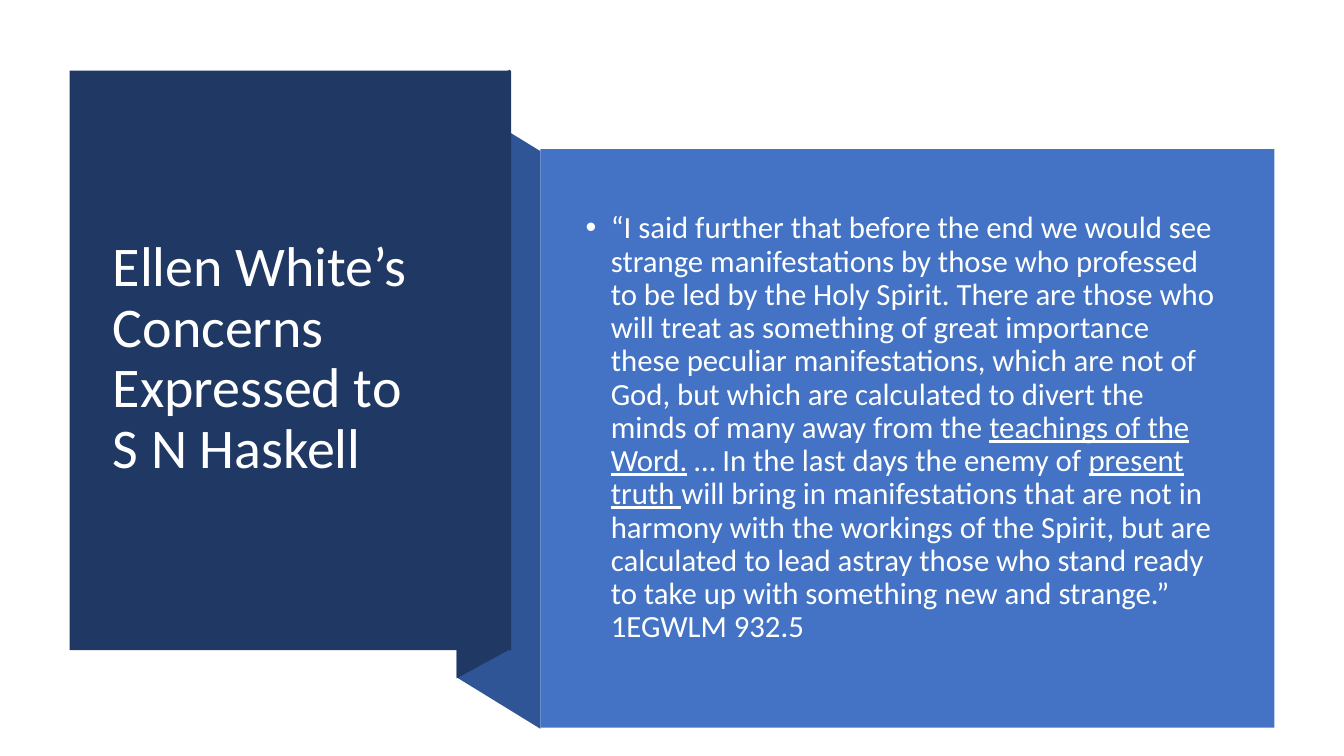
import pptx
import pptx.dml.color
import pptx.enum.shapes
import pptx.enum.text
import pptx.util
from lxml import etree

Inches = pptx.util.Inches
NAVY, SHADE, BLUE, WHITE = "203864", "2F5597", "4472C4", "FFFFFF"


def color(value):
    return pptx.dml.color.RGBColor.from_string(value)


class SlideBuilder:
    """Holds the text style and the current slide."""

    font = "Calibri"
    line_spacing = 0.9

    def __init__(self, page):
        self.page = page

    def paint(self, shape, fill):
        shape.shadow.inherit = False
        shape.fill.solid()
        shape.fill.fore_color.rgb = color(fill)
        shape.line.fill.background()

    def panel(self, left, top, width, height, fill):
        shape = self.page.shapes.add_shape(
            pptx.enum.shapes.MSO_SHAPE.RECTANGLE,
            Inches(left), Inches(top), Inches(width), Inches(height))
        self.paint(shape, fill)

    def fold(self, points, fill):
        corners = [(Inches(x), Inches(y)) for x, y in points]
        outline = self.page.shapes.build_freeform(*corners[0])
        outline.add_line_segments(corners[1:], close=True)
        self.paint(outline.convert_to_shape(), fill)

    def text(self, left, top, width, height, spans, size, fill):
        """Adds one paragraph made of (words, underlined) spans."""
        box = self.page.shapes.add_textbox(
            Inches(left), Inches(top), Inches(width), Inches(height))
        frame = box.text_frame
        frame.word_wrap = True
        frame.vertical_anchor = pptx.enum.text.MSO_ANCHOR.MIDDLE
        para = frame.paragraphs[0]
        para.line_spacing = self.line_spacing
        for words, underlined in spans:
            for number, line in enumerate(words.split("\n")):
                if number:
                    para.add_line_break()
                span = para.add_run()
                span.text = line
                span.font.name = self.font
                span.font.size = pptx.util.Pt(size)
                span.font.color.rgb = color(fill)
                span.font.underline = underlined
        return para

    def bullet(self, para, indent, space_before):
        para.space_before = pptx.util.Pt(space_before)
        properties = para._p.get_or_add_pPr()
        properties.set("marL", str(Inches(indent)))
        properties.set("indent", str(-Inches(indent)))
        for tag, name, value in (("buFont", "typeface", "Arial"),
                                 ("buChar", "char", "•")):
            mark = etree.SubElement(properties, pptx.oxml.ns.qn("a:" + tag))
            mark.set(name, value)


def main():
    deck = pptx.Presentation()
    deck.slide_width, deck.slide_height = Inches(13.33), Inches(7.5)
    slide = SlideBuilder(deck.slides.add_slide(deck.slide_layouts[6]))

    # Folded ribbon behind the two panels
    slide.fold([(5.36, 7.23), (4.53, 6.72), (4.53, 0.99), (5.36, 1.5)], SHADE)
    slide.fold([(5.06, 6.44), (4.53, 6.73), (4.53, 0.98), (5.06, 0.69)], NAVY)

    # Title panel
    slide.panel(0.69, 0.7, 4.38, 5.75, NAVY)
    title = "Ellen White’s Concerns Expressed to \nS N Haskell"
    slide.text(1.02, 1.07, 3.71, 4.99, [(title, False)], 40, WHITE)

    # Quotation panel
    slide.panel(5.36, 1.48, 7.28, 5.74, BLUE)
    quotation = [
        ("“I said further that before the end we would see strange "
         "manifestations by those who professed to be led by the Holy Spirit. "
         "There are those who will treat as something of great importance "
         "these peculiar manifestations, which are not of God, but which are "
         "calculated to divert the minds of many away from the ", False),
        ("teachings of the Word.", True),
        (" … In the last days the enemy of ", False),
        ("present truth ", True),
        ("will bring in manifestations that are not in harmony with the "
         "workings of the Spirit, but are calculated to lead astray those who "
         "stand ready to take up with something new and strange.” "
         "1EGWLM 932.5", False),
    ]
    para = slide.text(5.71, 1.88, 6.51, 4.74, quotation, 22, "FEFFFF")
    slide.bullet(para, indent=0.25, space_before=10)

    deck.save("out.pptx")


if __name__ == "__main__":
    main()
